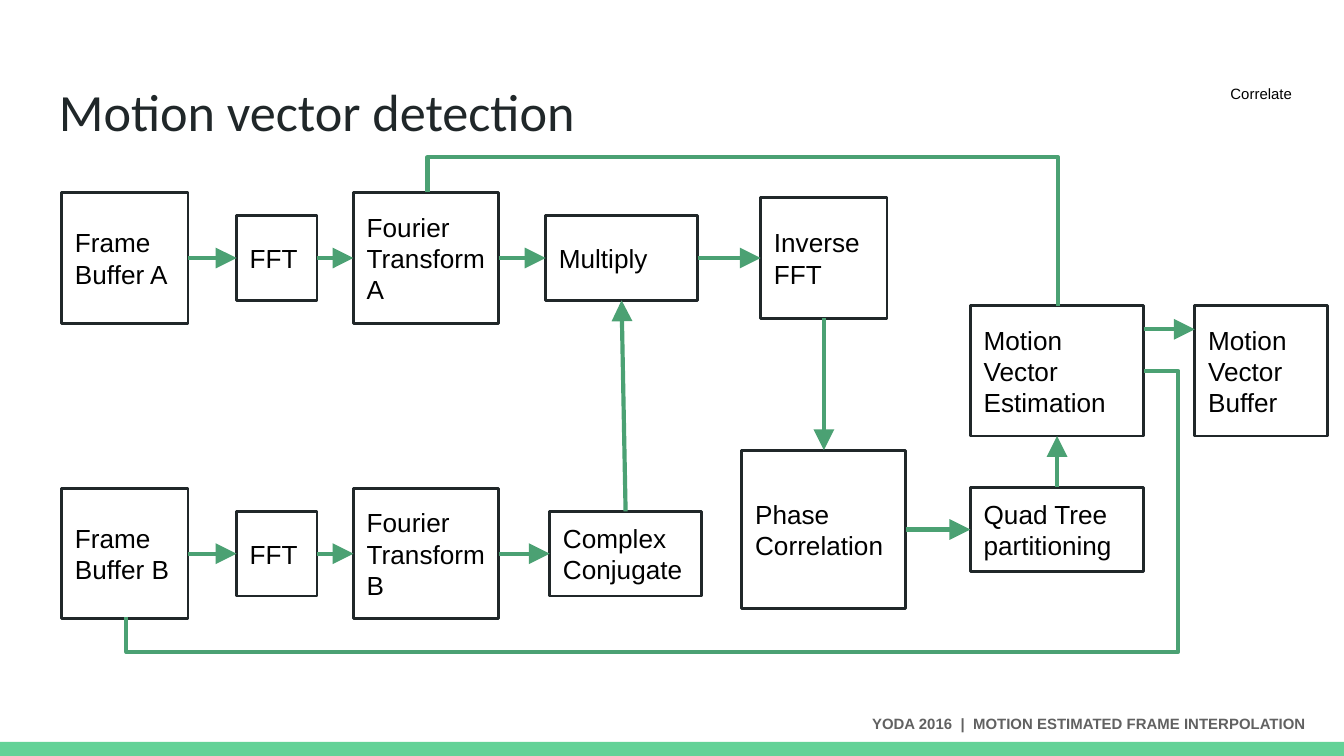
from lxml import etree
from pptx import Presentation
from pptx import util as u
from pptx.dml.color import RGBColor
from pptx.enum import shapes, text
from pptx.oxml import ns

WIDTH = 10
HEIGHT = WIDTH * 9 / 16
INK, GREEN, BAR_GREEN = "202729", "4BA173", "63D297"
TOP, LEFT, BOTTOM, RIGHT = range(4)

# Left edges of the columns and centre lines of the rows, in inches
COLUMNS = {"frame": 0.46, "fft": 1.76, "fourier": 2.63, "multiply": 4.06,
           "conjugate": 4.09, "phase": 5.52, "inverse": 5.66,
           "estimation": 7.22, "buffer": 8.89}
ROWS = {"A": 1.92, "estimation": 2.76, "correlation": 3.94, "B": 4.12}

# Step: label, column, row, width, height
STEPS = {
    "inverse": ("Inverse FFT", "inverse", "A", 0.94, 0.9),
    "phase": ("Phase Correlation", "phase", "correlation", 1.22, 1.18),
    "quad": ("Quad Tree partitioning", "estimation", "correlation", 1.29, 0.63),
    "estimation": ("Motion Vector Estimation", "estimation", "estimation", 1.29, 0.97),
    "buffer": ("Motion Vector Buffer", "buffer", "estimation", 0.99, 0.97),
}
for row, last, label in (("A", "multiply", "Multiply"),
                         ("B", "conjugate", "Complex Conjugate")):
    STEPS["frame" + row] = (f"Frame Buffer {row}", "frame", row, 0.94, 0.97)
    STEPS["fft" + row] = ("FFT", "fft", row, 0.6, 0.63)
    STEPS["fourier" + row] = (f"Fourier Transform {row}", "fourier", row, 1.08, 0.97)
    STEPS[last] = (label, last, row, 1.13, 0.63)

FLOWS = [
    ("frameA", RIGHT, "fftA", LEFT),
    ("frameB", RIGHT, "fftB", LEFT),
    ("fftA", RIGHT, "fourierA", LEFT),
    ("fftB", RIGHT, "fourierB", LEFT),
    ("fourierA", RIGHT, "multiply", LEFT),
    ("fourierB", RIGHT, "conjugate", LEFT),
    ("conjugate", TOP, "multiply", BOTTOM),
    ("multiply", RIGHT, "inverse", LEFT),
    ("inverse", BOTTOM, "phase", TOP),
    ("phase", RIGHT, "quad", LEFT),
    ("quad", TOP, "estimation", BOTTOM),
]


def colour(hex_value):
    return RGBColor.from_string(hex_value)


def inches(*lengths):
    return [u.Inches(length) for length in lengths]


def write(shape, words, size, ink="000000", font="Arial", bold=False, spacing=1.0,
          align=text.PP_ALIGN.LEFT, anchor=text.MSO_ANCHOR.TOP):
    frame = shape.text_frame
    frame.word_wrap = True
    frame.vertical_anchor = anchor
    frame.margin_left = frame.margin_right = u.Inches(0.1)
    frame.margin_top = frame.margin_bottom = u.Inches(0.1)
    frame.text = words
    paragraph = frame.paragraphs[0]
    paragraph.alignment = align
    paragraph.line_spacing = spacing
    run_font = paragraph.runs[0].font
    run_font.name, run_font.size, run_font.bold = font, u.Pt(size), bold
    run_font.color.rgb = colour(ink)


def add_words(slide, area, words, size, **style):
    write(slide.shapes.add_textbox(*inches(*area)), words, size, **style)


def add_rectangle(slide, area, fill):
    rectangle = slide.shapes.add_shape(shapes.MSO_SHAPE.RECTANGLE, *inches(*area))
    rectangle.shadow.inherit = False
    rectangle.fill.solid()
    rectangle.fill.fore_color.rgb = colour(fill)
    rectangle.line.fill.background()
    return rectangle


def add_step(slide, label, column, row, width, height):
    area = (COLUMNS[column], ROWS[row] - height / 2, width, height)
    step = add_rectangle(slide, area, "FFFFFF")
    step.line.color.rgb = colour(INK)
    step.line.width = u.Pt(1.5)
    write(step, label, 14, anchor=text.MSO_ANCHOR.MIDDLE)
    return step


def add_line(slide, kind, start=(0, 0), end=(0, 0)):
    line = slide.shapes.add_connector(kind, *inches(*start, *end))
    line.line.color.rgb = colour(GREEN)
    line.line.width = u.Pt(2.25)
    etree.SubElement(line._element.spPr, ns.qn("a:effectLst"))
    return line


def add_arrow(slide, start=(0, 0), end=(0, 0)):
    arrow = add_line(slide, shapes.MSO_CONNECTOR.STRAIGHT, start, end)
    etree.SubElement(arrow.line._get_or_add_ln(), ns.qn("a:tailEnd"),
                     type="triangle", w="lg", len="lg")
    return arrow


def add_detour(slide, start, end, lane_y, lane_x=None):
    """Bent line that leaves start vertically, follows lane_y, then lane_x if given."""
    (x0, y0), (x1, y1) = start, end
    width, height = abs(y1 - y0), abs(x1 - x0)  # swapped by the quarter turn
    left, top = (x0 + x1 - width) / 2, (y0 + y1 - height) / 2
    detour = add_line(slide, shapes.MSO_CONNECTOR.ELBOW,
                      (left, top), (left + width, top + height))
    properties = detour._element.spPr
    frame = properties.find(ns.qn("a:xfrm"))
    frame.set("rot", str(270 * 60000))
    if y1 > y0:
        frame.set("flipH", "1")
    bends = [(lane_y - y0) / (y1 - y0)]
    if lane_x is not None:
        bends.append((lane_x - x0) / (x1 - x0))
    geometry = properties.find(ns.qn("a:prstGeom"))
    geometry.set("prst", f"bentConnector{len(bends) + 2}")
    guides = geometry.find(ns.qn("a:avLst"))
    for number, share in enumerate(bends, 1):
        etree.SubElement(guides, ns.qn("a:gd"), name=f"adj{number}",
                         fmla=f"val {round(share * 100000)}")


def add_diagram(slide):
    steps = {key: add_step(slide, *step) for key, step in STEPS.items()}
    for source, source_side, target, target_side in FLOWS:
        arrow = add_arrow(slide)
        arrow.begin_connect(steps[source], source_side)
        arrow.end_connect(steps[target], target_side)
    add_arrow(slide, (8.51, 2.45), (COLUMNS["buffer"], 2.45))
    add_detour(slide, (3.18, 1.43), (7.87, 2.28), 1.17)
    add_detour(slide, (0.94, 4.59), (8.51, ROWS["estimation"]), 4.85, 8.77)


def main():
    deck = Presentation()
    deck.slide_width, deck.slide_height = inches(WIDTH, HEIGHT)
    slide = deck.slides.add_slide(deck.slide_layouts[6])
    add_rectangle(slide, (0, 5.52, WIDTH, 0.11), BAR_GREEN)
    add_words(slide, (6.39, 5.19, 3.61, 0.33),
              "YODA 2016  |  MOTION ESTIMATED FRAME INTERPOLATION", 8,
              ink="616161", bold=True, spacing=1.3)
    add_words(slide, (0.34, 0.49, 9.32, 0.63), "Motion vector detection", 28,
              ink=INK, font="Calibri")
    add_diagram(slide)
    add_words(slide, (9.03, 0.53, 0.71, 0.2), "Correlate", 8, spacing=1.15,
              align=text.PP_ALIGN.CENTER)
    deck.save("out.pptx")


if __name__ == "__main__":
    main()
